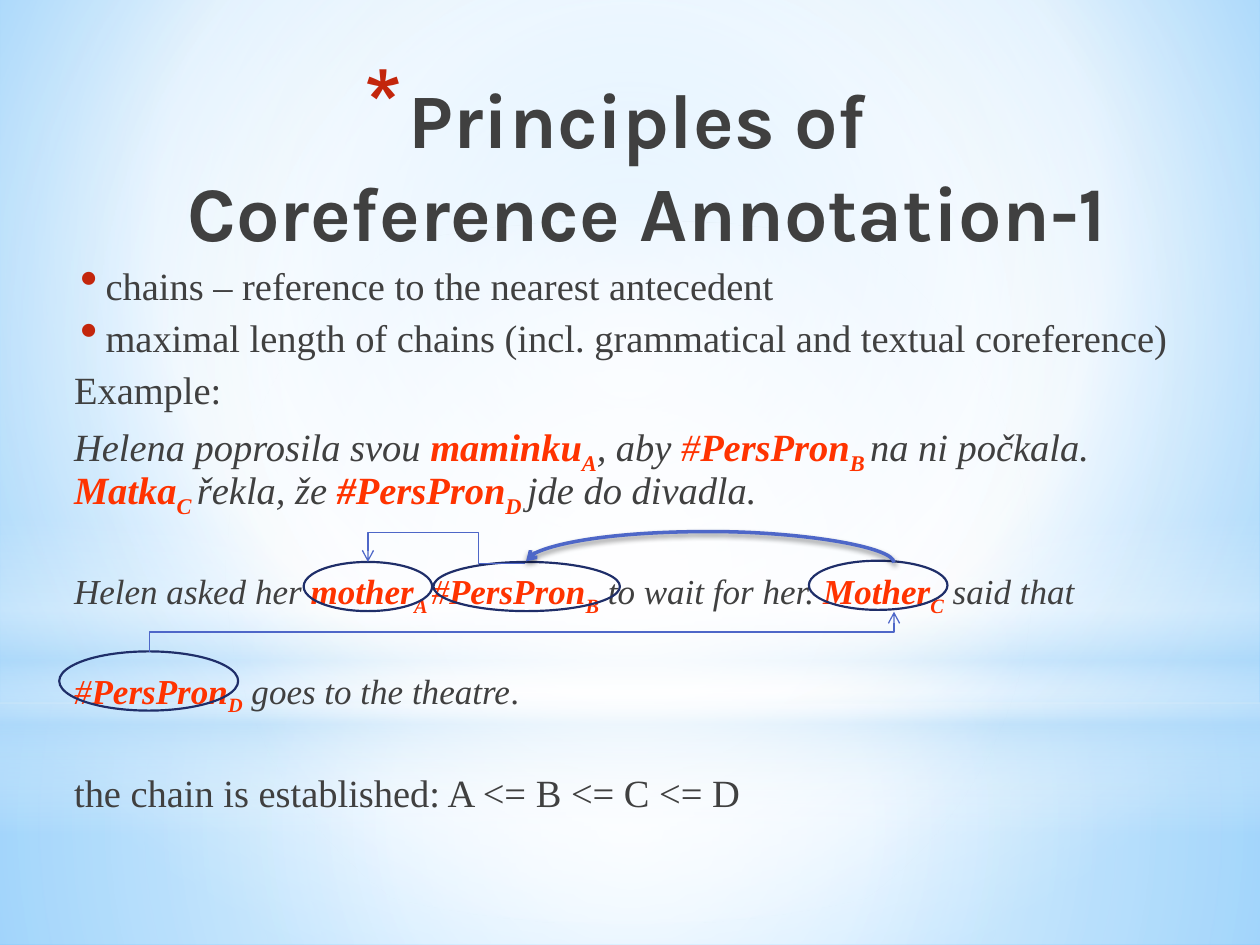
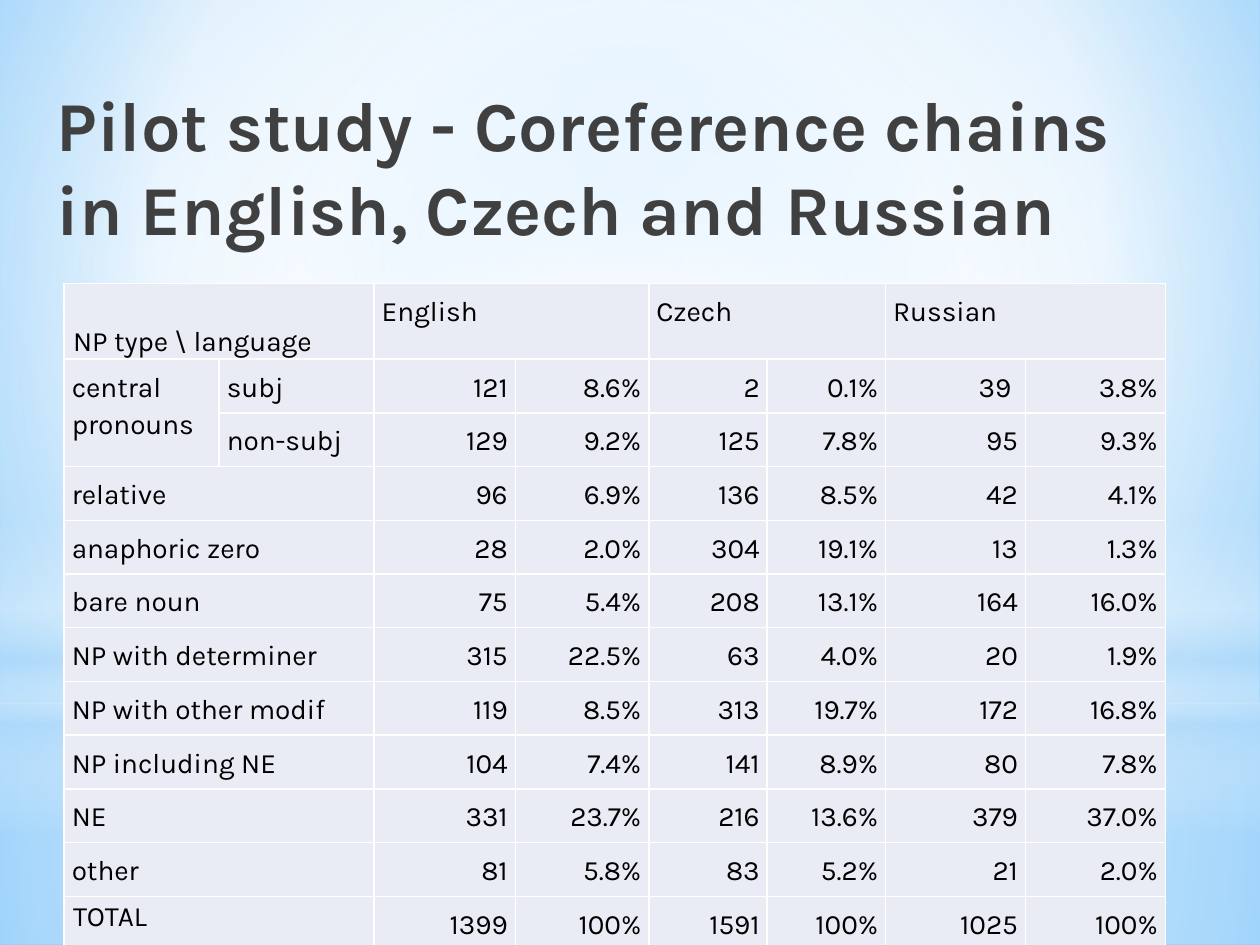
from lxml.etree import SubElement
from pptx import Presentation
from pptx.dml.color import RGBColor
from pptx.enum.shapes import MSO_CONNECTOR as LINK, MSO_SHAPE as SHAPE
from pptx.enum.text import MSO_ANCHOR as ANCHOR, PP_ALIGN as ALIGN
from pptx.oxml import parse_xml
from pptx.oxml.ns import nsdecls, qn
from pptx.util import Inches, Pt

WIDE, HIGH = 10, 7.5
HUES = {"text": "404040", "hot": "FF3300", "bullet": "C3260C", "ring": "1F2E69",
        "link": "4E67C8", "cell": "E9EBF5", "white": "FFFFFF", "black": "000000",
        "pale": "B4DCFA", "sky": "9ED5FF", "deep": "5BB9FF"}
SANS, SERIF = "Karla", "Times New Roman"

# Gradient stops: position, colour, opacity (all in percent)
SKY = [(0, "sky", 100), (60, "white", 100), (100, "deep", 100)]
BANDS = [  # shape, top, height, stops, angle (None: radial)
    (SHAPE.RECTANGLE, 5.58, 1.92,
     [(0, "white", 91), (37, "white", 76), (100, "pale", 79)], None),
    (SHAPE.RECTANGLE, 0, 5.58,
     [(0, "white", 89), (48, "white", 62), (100, "pale", 79)], None),
    (SHAPE.RECTANGLE, 4.12, 2.5,
     [(0, "white", 0), (29, "white", 30), (45, "pale", 40), (55, "white", 26),
      (65, "pale", 60), (100, "white", 0)], 90),
    (SHAPE.OVAL, 1.75, 5.58, [(0, "white", 100), (56, "white", 0)], None),
]

# Paragraphs: size, space before, bulleted, runs of (text, marks)
# Marks: i italic, h hot colour, b bold, s subscript
BODY = [
    (22, 0, True, [("chains – reference to the nearest antecedent", "")]),
    (22, 5, True, [("maximal length of chains (incl. grammatical and textual "
                    "coreference)", "")]),
    (22, 5, False, [("Example:", "")]),
    (22, 5, False, [
        ("Helena poprosila svou ", "i"), ("maminku", "ihb"), ("A", "ihbs"),
        (", aby ", "i"), ("#", "ih"), ("PersPron", "ihb"), ("B ", "ihbs"),
        ("na ni počkala. ", "i"), ("Matka", "ihb"), ("C ", "ihbs"),
        ("řekla, že ", "i"), ("#PersPron", "ihb"), ("D ", "ihbs"),
        ("jde do divadla.", "i")]),
    (20, 31, False, [
        ("Helen asked her ", "i"), ("mother", "ihb"), ("A ", "ihbs"), ("#", "ih"),
        ("PersPron", "ihb"), ("B", "ihbs"), (" to wait for her. ", "i"),
        ("Mother", "ihb"), ("C", "ihbs"), (" said that", "i")]),
    (20, 31, False, [
        ("#", "ih"), ("PersPron", "ihb"), ("D", "ihbs"),
        (" goes to the theatre", "i"), (".", "")]),
    (22, 34, False, [("the chain is established: A <= B <= C <= D", "")]),
]
RINGS = [(2.41, 4.46, 1.02, 0.39), (3.44, 4.46, 1.48, 0.39),
         (6.42, 4.45, 1.1, 0.39), (0.47, 5.17, 1.42, 0.47)]
LINKS = [  # preset, box before turning, turn, flips, adjusts, width, shadow
    ("bentConnector4", (2.92, 4.46, 1.25, 0.01), 180, "", (0.3, 25), 0.75, False),
    ("bentConnector3", (3.98, 2.06, 0.32, 5.91), 90, "HV", (), 0.75, False),
    ("curvedConnector3", (5.63, 3, 0.01, 2.92), 270, "V", (25,), 2, True),
]

LANGS = ["English", "Czech", "Russian"]
COLS = [1.23, 1.23, 1.12, 1.06, 0.94, 0.94, 1.11, 1.11]
HEAD, ROW = 0.6, 0.42
COUNTS = [  # type, subtype, then count and share for each language
    ("central pronouns", "subj", "121", "8.6%", "2", "0.1%", "39 ", "3.8%"),
    ("", "non-subj", "129", "9.2%", "125", "7.8%", "95", "9.3%"),
    ("relative", "", "96", "6.9%", "136", "8.5%", "42", "4.1%"),
    ("anaphoric zero", "", "28", "2.0%", "304", "19.1%", "13", "1.3%"),
    ("bare noun", "", "75", "5.4%", "208", "13.1%", "164", "16.0%"),
    ("NP with determiner", "", "315", "22.5%", "63", "4.0%", "20", "1.9%"),
    ("NP with other modif", "", "119", "8.5%", "313", "19.7%", "172", "16.8%"),
    ("NP including NE", "", "104", "7.4%", "141", "8.9%", "80", "7.8%"),
    ("NE", "", "331", "23.7%", "216", "13.6%", "379", "37.0%"),
    ("other", "", "81", "5.8%", "83", "5.2%", "21", "2.0%"),
    ("TOTAL", "", "1399", "100%", "1591", "100%", "1025", "100%"),
]


def hue(name):
    return RGBColor.from_string(HUES[name])


def inch(box):
    return [Inches(n) for n in box]


def blend(owner, fill, stops, angle=None, focus=(50, 50, 50, 50)):
    """Fill a shape or a slide's background with a gradient."""
    fill.solid()
    old = owner.element.xpath(".//p:bgPr/a:solidFill | ./p:spPr/a:solidFill")[0]
    marks = "".join(
        f'<a:gs pos="{pos * 1000}"><a:srgbClr val="{HUES[name]}">'
        f'<a:alpha val="{alpha * 1000}"/></a:srgbClr></a:gs>'
        for pos, name, alpha in stops)
    if angle is None:
        sides = " ".join(f'{s}="{n * 1000}"' for s, n in zip("ltrb", focus))
        way = f'<a:path path="circle"><a:fillToRect {sides}/></a:path>'
    else:
        way = f'<a:lin ang="{angle * 60000}" scaled="0"/>'
    new = parse_xml(f'<a:gradFill {nsdecls("a")} rotWithShape="1">'
                    f'<a:gsLst>{marks}</a:gsLst>{way}</a:gradFill>')
    old.getparent().replace(old, new)


def bullet(para, sign, size, left, hang):
    props = para._p.get_or_add_pPr()
    props.set("marL", str(Inches(left)))
    props.set("indent", str(-Inches(hang)))
    tint = SubElement(props, qn("a:buClr"))
    SubElement(tint, qn("a:srgbClr"), val=HUES["bullet"])
    SubElement(props, qn("a:buSzPct"), val=str(size * 1000))
    SubElement(props, qn("a:buChar"), char=sign)


def style(font, name, size, tint, bold=False):
    font.name, font.size, font.bold = name, Pt(size), bold
    font.color.rgb = hue(tint)


def frame(slide, box):
    text = slide.shapes.add_textbox(*inch(box)).text_frame
    text.word_wrap = True
    return text


def title(slide, text, box, size, star=False):
    para = frame(slide, box).paragraphs[0]
    para.text = text
    if star:
        para.alignment = ALIGN.CENTER
        bullet(para, "*", 128, 0.35, 0.35)
    style(para.font, SANS, size, "text", True)


def page(deck):
    """Add a slide with the shared background and bands."""
    slide = deck.slides.add_slide(deck.slide_layouts[6])
    blend(slide, slide.background.fill, SKY, focus=(20, 10, 20, 60))
    for kind, top, high, stops, angle in BANDS:
        band = slide.shapes.add_shape(kind, *inch((0, top, WIDE, high)))
        band.shadow.inherit = False
        band.line.fill.background()
        blend(band, band.fill, stops, angle)
    return slide


def body(slide):
    text = frame(slide, (0.49, 2.09, 9, 4.8))
    for at, (size, before, dot, runs) in enumerate(BODY):
        para = text.add_paragraph() if at else text.paragraphs[0]
        para.line_spacing = 0.83
        para.space_before, para.space_after = Pt(before), Pt(3)
        if dot:
            bullet(para, "•", 130, 0.25, 0.2)
        style(para.font, SERIF, size, "text")
        for words, marks in runs:
            run = para.add_run()
            run.text = words
            if "i" in marks:
                run.font.italic = True
            if "b" in marks:
                run.font.bold = True
            if "h" in marks:
                run.font.color.rgb = hue("hot")
            if "s" in marks:
                run.font._element.set("baseline", "-25000")


def ring(slide, box):
    oval = slide.shapes.add_shape(SHAPE.OVAL, *inch(box))
    oval.shadow.inherit = False
    oval.fill.background()
    oval.line.color.rgb, oval.line.width = hue("ring"), Pt(1.25)


def link(slide, preset, box, turn, flips, adjusts, width, shadow):
    x, y, w, h = box
    line = slide.shapes.add_connector(LINK.ELBOW, *inch((x, y, x + w, y + h)))
    line.line.color.rgb, line.line.width = hue("link"), Pt(width)
    props = line.element.spPr
    spot = props.find(qn("a:xfrm"))
    spot.set("rot", str(turn * 60000))
    for flip in flips:
        spot.set("flip" + flip, "1")
    shape = props.find(qn("a:prstGeom"))
    shape.set("prst", preset)
    guides = shape.find(qn("a:avLst"))
    for at, share in enumerate(adjusts, 1):
        SubElement(guides, qn("a:gd"), name=f"adj{at}",
                   fmla=f"val {round(share * 100000)}")
    SubElement(props.find(qn("a:ln")), qn("a:tailEnd"), type="arrow")
    glow = SubElement(props, qn("a:effectLst"))
    if shadow:
        cast = SubElement(glow, qn("a:outerShdw"), blurRad=str(Pt(3.1)),
                          dist=str(Pt(1.8)), dir="5400000", rotWithShape="0")
        tint = SubElement(cast, qn("a:srgbClr"), val=HUES["black"])
        SubElement(tint, qn("a:alpha"), val="45000")


def edge(cell):
    """Give a cell a thin white border, placed ahead of its fill."""
    props = cell._tc.get_or_add_tcPr()
    for at, side in enumerate(("lnL", "lnR", "lnT", "lnB")):
        props.insert(at, parse_xml(
            f'<a:{side} {nsdecls("a")} w="{Pt(1)}"><a:solidFill>'
            f'<a:srgbClr val="{HUES["white"]}"/></a:solidFill></a:{side}>'))


def table(slide):
    heads = ["NP type \\ language", ""]
    for lang in LANGS:
        heads += [lang, ""]
    rows = [heads, *COUNTS]
    high = HEAD + ROW * len(COUNTS)
    grid = slide.shapes.add_table(
        len(rows), len(COLS), *inch((0.51, 2.25, sum(COLS), high))).table
    for col, wide in zip(grid.columns, COLS):
        col.width = Inches(wide)
    for r, row in enumerate(rows):
        grid.rows[r].height = Inches(ROW if r else HEAD)
        for c, words in enumerate(row):
            cell = grid.cell(r, c)
            cell.fill.solid()
            cell.fill.fore_color.rgb = hue("cell")
            edge(cell)
            flush = c == 0 and r in (0, len(COUNTS))
            cell.margin_left = cell.margin_right = Inches(0.07 if flush else 0.06)
            cell.margin_top = cell.margin_bottom = Inches(0 if flush else 0.06)
            para = cell.text_frame.paragraphs[0]
            para.text = words
            para.line_spacing = 1.15
            if r and c > 1:
                para.alignment = ALIGN.RIGHT
            style(para.font, SANS, 16, "black")
    grid.cell(0, 0).vertical_anchor = ANCHOR.BOTTOM
    for c in range(0, len(COLS), 2):
        grid.cell(0, c).merge(grid.cell(0, c + 1))
    grid.cell(1, 0).merge(grid.cell(2, 0))
    for r in range(3, len(rows)):
        grid.cell(r, 0).merge(grid.cell(r, 1))


def main():
    deck = Presentation()
    deck.slide_width, deck.slide_height = inch((WIDE, HIGH))

    rules = page(deck)
    body(rules)
    title(rules, "Principles of \vCoreference Annotation-1",
          (0.2, 0.52, 9.53, 0.87), 44, star=True)
    for box in RINGS:
        ring(rules, box)
    for item in LINKS:
        link(rules, *item)

    pilot = page(deck)
    table(pilot)
    title(pilot, "Pilot study - Coreference chains in English, Czech and Russian",
          (0.35, 0.6, 9.13, 1.25), 40)
    deck.save("out.pptx")


if __name__ == "__main__":
    main()
